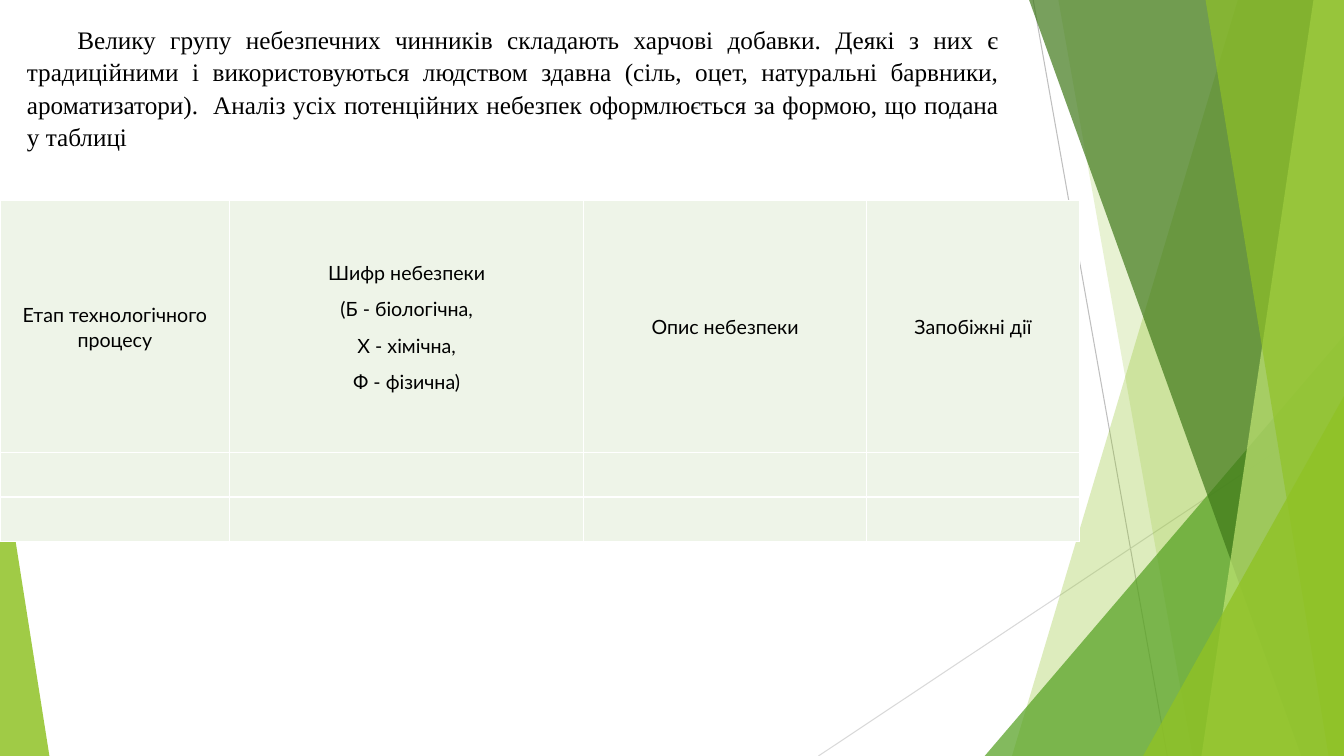
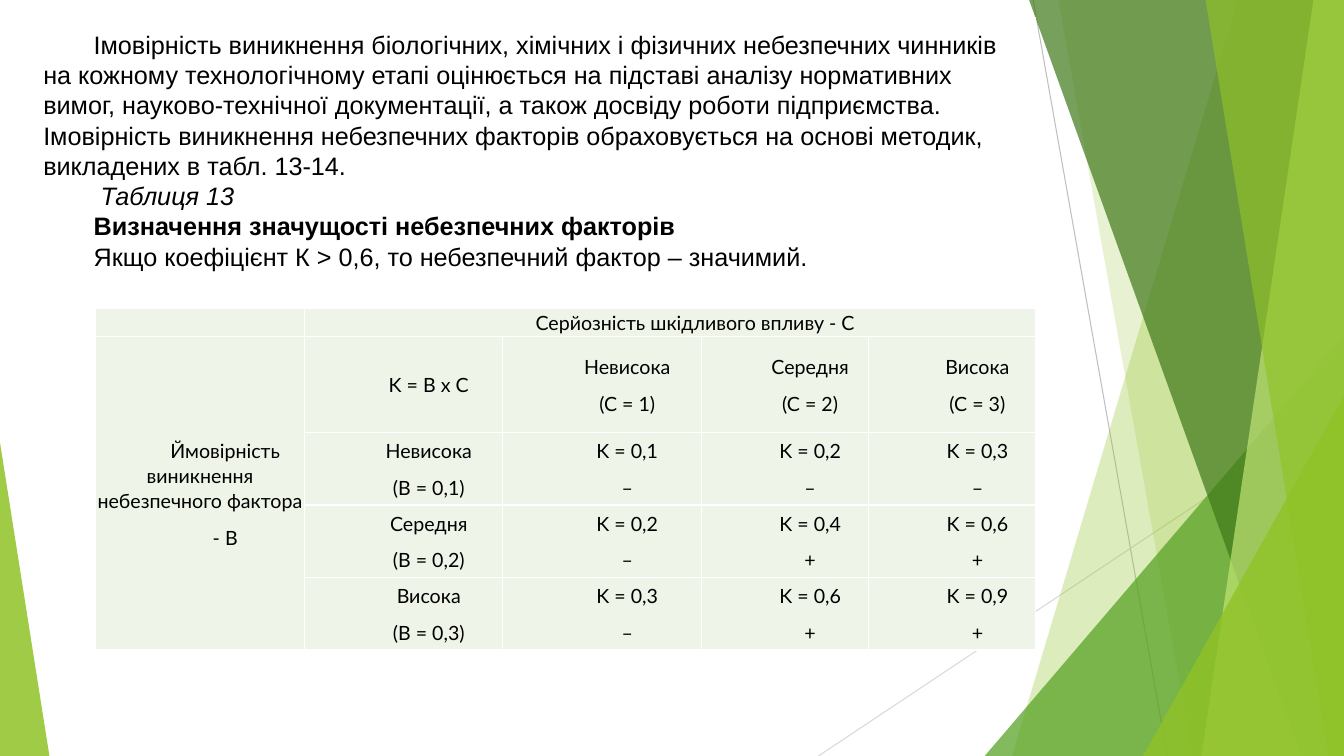
from dataclasses import dataclass

from lxml.etree import SubElement
from pptx import Presentation
from pptx.dml.color import RGBColor
from pptx.enum.shapes import MSO_CONNECTOR, MSO_SHAPE
from pptx.enum.text import MSO_ANCHOR, PP_ALIGN
from pptx.oxml.ns import qn
from pptx.util import Pt


@dataclass(frozen=True)
class Theme:
    width: float = 960
    height: float = 540
    white: str = "FFFFFF"
    ink: str = "000000"
    cell: str = "EEF4E8"
    lime: str = "90C226"
    pale_lime: str = "C0E474"
    green: str = "54A021"
    dark_green: str = "3F7819"
    gray: str = "BFBFBF"
    light_gray: str = "D9D9D9"
    serif: str = "Times New Roman"
    sans: str = "Arial"
    table_font: str = "Lato"
    body_size: float = 18
    table_size: float = 14
    indent: float = 36


THEME = Theme()

HAZARD_FORM = [
    ["Етап технологічного процесу",
     "Шифр небезпеки\n(Б - біологічна,\nХ - хімічна,\nФ - фізична)",
     "Опис небезпеки", "Запобіжні дії"],
    [""] * 4,
    [""] * 4,
]

RISK_MATRIX = [
    ["", "Серйозність шкідливого впливу - C", "", "", ""],
    ["Ймовірність виникнення небезпечного фактора\n- B", "K = B x C",
     "Невисока\n(С = 1)", "Середня\n(C = 2)", "Висока\n(С = 3)"],
    ["", "Невисока\n(В = 0,1)", "K = 0,1\n–", "K = 0,2\n–", "K = 0,3\n–"],
    ["", "Середня\n(В = 0,2)", "K = 0,2\n–", "K = 0,4\n+", "K = 0,6\n+"],
    ["", "Висока\n(B = 0,3)", "K = 0,3\n–", "K = 0,6\n+", "K = 0,9\n+"],
]


# Text
def write_text(frame, text, font=THEME.sans, size=THEME.body_size, bold=False,
               italic=False, align=PP_ALIGN.LEFT, indent=0, spacing=1.0, after=0):
    """Add each line of text as a paragraph, filling the first one if unused."""
    for line in text.split("\n"):
        paragraph = frame.paragraphs[0] if not frame.text else frame.add_paragraph()
        paragraph.alignment = align
        paragraph.line_spacing = spacing
        paragraph.space_after = Pt(after)
        properties = paragraph._p.get_or_add_pPr()
        properties.set("marL", "0")
        properties.set("indent", str(Pt(indent)))
        if not line:
            SubElement(paragraph._p, qn("a:endParaRPr"), sz=str(int(size * 100)))
            continue
        run = paragraph.add_run()
        run.text = line
        run.font.name = font
        run.font.size = Pt(size)
        run.font.bold = bold
        run.font.italic = italic
        run.font.color.rgb = RGBColor.from_string(THEME.ink)


# Shapes
def paint(shape, color, opacity=100):
    shape.shadow.inherit = False
    shape.line.fill.background()
    shape.fill.solid()
    shape.fill.fore_color.rgb = RGBColor.from_string(color)
    if opacity < 100:
        tint = shape.element.spPr.find(qn("a:solidFill")).find(qn("a:srgbClr"))
        SubElement(tint, qn("a:alpha"), val=str(opacity * 1000))


def add_line(shapes, start, end, color):
    line = shapes.add_connector(MSO_CONNECTOR.STRAIGHT,
                                *(Pt(v) for v in (*start, *end)))
    line.line.color.rgb = RGBColor.from_string(color)
    line.line.width = Pt(0.75)
    SubElement(line.element.spPr, qn("a:effectLst"))


def add_band(shapes, top_left, bottom_left, color, opacity):
    """Band from a slanted left edge to the right edge of the slide."""
    outline = shapes.build_freeform(Pt(top_left), 0)
    outline.add_line_segments([
        (Pt(THEME.width), 0),
        (Pt(THEME.width), Pt(THEME.height)),
        (Pt(bottom_left), Pt(THEME.height)),
    ])
    paint(outline.convert_to_shape(), color, opacity)


def add_corner(shapes, left, top, width, apex, color, opacity):
    """Triangle standing on the bottom edge of the slide."""
    corner = shapes.add_shape(MSO_SHAPE.ISOSCELES_TRIANGLE, Pt(left), Pt(top),
                              Pt(width), Pt(THEME.height - top))
    corner.adjustments[0] = apex
    paint(corner, color, opacity)


# Shared decoration
def decorate_master(master, slide):
    """Draw the facets once and move them from the slide to the master."""
    facets = slide.shapes.add_group_shape()
    shapes = facets.shapes
    add_line(shapes, (738, 0), (833.8, THEME.height), THEME.gray)
    add_line(shapes, (THEME.width, 290.2), (584.6, THEME.height), THEME.light_gray)
    add_band(shapes, 884.2, 722.9, THEME.lime, 30)
    add_band(shapes, 756, 851.8, THEME.lime, 20)
    add_corner(shapes, 703.4, 239.8, 256.6, 1, THEME.green, 72)
    add_band(shapes, 735.1, 929.5, THEME.dark_green, 70)
    add_band(shapes, 938.2, 858.2, THEME.pale_lime, 70)
    add_band(shapes, 861.1, 949, THEME.lime, 65)
    add_corner(shapes, 816.5, 283, 143.5, 1, THEME.lime, 80)
    add_corner(shapes, 0, 316.1, 35.3, 0, THEME.lime, 85)
    for number, label in enumerate(facets.element.iter(qn("p:cNvPr")), start=100):
        label.set("id", str(number))
    master.element.cSld.spTree.insert(2, facets.element)


# Tables
def format_cell(cell, text, indent):
    cell.margin_left = cell.margin_right = cell.margin_top = cell.margin_bottom = 0
    cell.vertical_anchor = MSO_ANCHOR.MIDDLE
    write_text(cell.text_frame, text, font=THEME.table_font, size=THEME.table_size,
               align=PP_ALIGN.CENTER, indent=indent, spacing=1.07, after=8)
    properties = cell._tc.get_or_add_tcPr()
    for side in ("a:lnL", "a:lnR", "a:lnT", "a:lnB"):
        border = SubElement(properties, qn(side), w=str(Pt(1)))
        SubElement(SubElement(border, qn("a:solidFill")), qn("a:srgbClr"),
                   val=THEME.white)
    cell.fill.solid()
    cell.fill.fore_color.rgb = RGBColor.from_string(THEME.cell)


def add_grid(slide, left, top, widths, heights, rows, indent=0):
    table = slide.shapes.add_table(len(heights), len(widths), Pt(left), Pt(top),
                                   Pt(sum(widths)), Pt(sum(heights))).table
    table.first_row = table.horz_banding = False
    for column, width in zip(table.columns, widths):
        column.width = Pt(width)
    for row, height, texts in zip(table.rows, heights, rows):
        row.height = Pt(height)
        for cell, text in zip(row.cells, texts):
            format_cell(cell, text, indent)
    return table


# Slides
def build_hazard_form(slide):
    intro = slide.shapes.add_textbox(Pt(12.2), Pt(12.2), Pt(708.5), Pt(99.4)).text_frame
    intro.word_wrap = True
    write_text(
        intro,
        "Велику групу небезпечних чинників складають харчові добавки. Деякі з них є "
        "традиційними і використовуються людством здавна (сіль, оцет, натуральні "
        "барвники, ароматизатори).  Аналіз усіх потенційних небезпек оформлюється "
        "за формою, що подана у таблиці",
        font=THEME.serif, align=PP_ALIGN.JUSTIFY, indent=THEME.indent,
        spacing=1.07, after=8)
    add_grid(slide, 0, 143.3, [164.2, 252.7, 202.3, 151.9], [180, 31.7, 31.7],
             HAZARD_FORM)


def build_risk_matrix(slide):
    matrix = add_grid(slide, 68.4, 220.3, [149, 141.8, 141.8, 119.5, 119.5],
                      [20.2, 68.4] + [51.8] * 3, RISK_MATRIX, indent=THEME.indent)
    matrix.cell(0, 1).merge(matrix.cell(0, 4))
    matrix.cell(1, 0).merge(matrix.cell(4, 0))

    panel = slide.shapes.add_shape(MSO_SHAPE.RECTANGLE, Pt(23.8), Pt(12.2),
                                   Pt(716.4), Pt(203.8))
    paint(panel, THEME.white)
    method = panel.text_frame
    method.word_wrap = True
    method.vertical_anchor = MSO_ANCHOR.TOP
    method.margin_top = Pt(8.7)
    write_text(
        method,
        "Імовірність виникнення біологічних, хімічних і фізичних небезпечних чинників "
        "на кожному технологічному етапі оцінюється на підставі аналізу нормативних "
        "вимог, науково-технічної документації, а також досвіду роботи підприємства. "
        "Імовірність виникнення небезпечних факторів обраховується на основі методик, "
        "викладених в табл. 13-14.", indent=THEME.indent)
    write_text(method, "Таблиця 13", italic=True, indent=THEME.indent + 5)
    write_text(method, "Визначення значущості небезпечних факторів", bold=True,
               indent=THEME.indent)
    write_text(method, "Якщо коефіцієнт К > 0,6, то небезпечний фактор – значимий.",
               indent=THEME.indent)


def main():
    deck = Presentation()
    deck.slide_width, deck.slide_height = Pt(THEME.width), Pt(THEME.height)
    blank = deck.slide_layouts[6]
    form_slide, matrix_slide = (deck.slides.add_slide(blank) for _ in range(2))
    decorate_master(deck.slide_master, form_slide)
    build_hazard_form(form_slide)
    build_risk_matrix(matrix_slide)
    deck.save("out.pptx")


if __name__ == "__main__":
    main()
